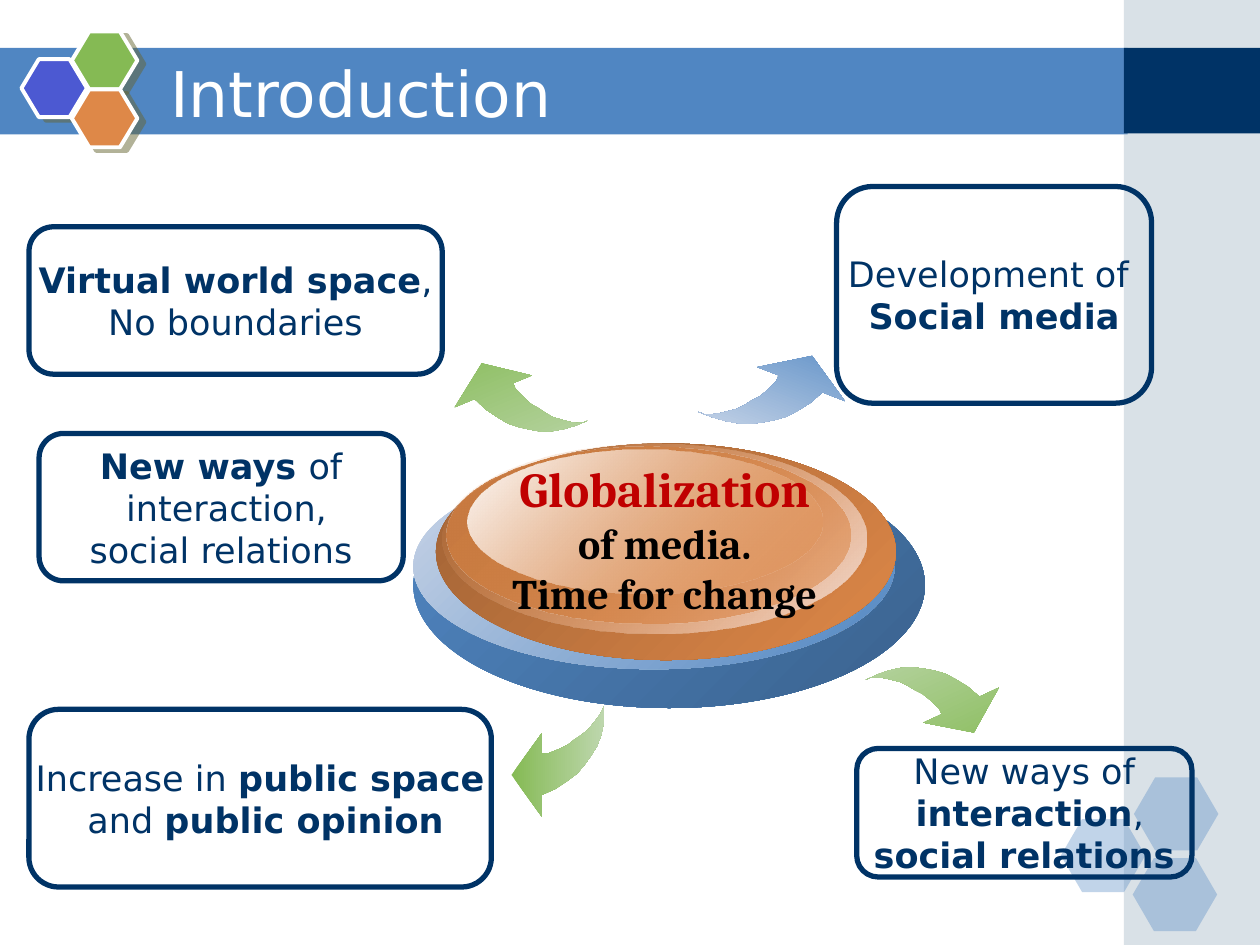
"""Build the introduction slide on the globalization of media."""
from lxml import etree
from pptx import Presentation
from pptx.dml.color import RGBColor
from pptx.enum.shapes import MSO_SHAPE
from pptx.enum.text import MSO_ANCHOR, PP_ALIGN
from pptx.oxml.ns import qn
from pptx.util import Pt

RECTANGLE, HEXAGON = MSO_SHAPE.RECTANGLE, MSO_SHAPE.HEXAGON
OVAL, ROUNDED = MSO_SHAPE.OVAL, MSO_SHAPE.ROUNDED_RECTANGLE
MIDDLE, TOP = MSO_ANCHOR.MIDDLE, MSO_ANCHOR.TOP
CENTER, LEFT = PP_ALIGN.CENTER, PP_ALIGN.LEFT

WHITE = RGBColor(0xFF, 0xFF, 0xFF)
BLACK = RGBColor(0x00, 0x00, 0x00)
NAVY = RGBColor(0x00, 0x33, 0x66)
BLUE = RGBColor(0x50, 0x86, 0xC2)
DEEP_BLUE = RGBColor(0x3A, 0x62, 0x8E)
PALE_BLUE = RGBColor(0xCA, 0xD5, 0xE7)
ICE_BLUE = RGBColor(0xDB, 0xE2, 0xEE)
GRAY_BLUE = RGBColor(0xA0, 0xB5, 0xC4)
INDIGO = RGBColor(0x4C, 0x59, 0xD2)
GREEN = RGBColor(0x85, 0xBA, 0x54)
PALE_GREEN = RGBColor(0xBE, 0xD7, 0xAE)
ORANGE = RGBColor(0xDE, 0x88, 0x48)
BROWN = RGBColor(0x9F, 0x61, 0x34)
COPPER = RGBColor(0xC9, 0x7B, 0x41)
PEACH = RGBColor(0xF4, 0xDF, 0xD6)
RED = RGBColor(0xC0, 0x00, 0x00)
OLIVE = RGBColor(0x66, 0x66, 0x33)
SANS, SERIF = "DejaVu Sans", "Cambria"

TITLE = "Introduction"
TITLE_FRAME = (90, 30.24, 527.76, 44.64)
BANDS = [
    ((-0.72, 27.36, 645.12, 49.5), (BLUE, 100)),
    ((642.24, 0, 77.76, 540), (GRAY_BLUE, 40)),
    ((642.24, 27.36, 77.76, 48.96), (NAVY, 100)),
]
PALE_HEXAGONS = [(606.24, 468), (648, 444.24), (647.28, 490.32)]
BADGE_HEXAGONS = [(12.24, 33.84, INDIGO), (41.04, 18, GREEN), (41.04, 51.12, ORANGE)]
DISC = [
    ((236.2, 264.2, 292.3, 140.4), [(BLUE, 100), (DEEP_BLUE, 100)]),
    ((236.2, 265, 275, 117.4), [(PALE_BLUE, 100), (BLUE, 100)]),
    ((249.1, 253.4, 262.8, 123.8), [(BROWN, 100), (ORANGE, 100)]),
    ((252.7, 253.4, 242.6, 108.7), [(ORANGE, 0), (PEACH, 100)]),
    ((254.9, 254.9, 231.1, 101.5), [(COPPER, 100), (ORANGE, 48)]),
    ((267.1, 257, 203, 82.1), [(WHITE, 100), (ORANGE, 38)]),
]
DISC_TEXT_FRAME = (281.5, 258.5, 196.6, 99.4)
DISC_LINES = [("*Globalization*", 28, RED), ("*of media.*", 24, BLACK),
              ("*Time for change*", 24, BLACK)]
IDEAS = [
    ((16.56, 129.6, 236.16, 84.24), ["*Virtual world space*,", "No boundaries"]),
    ((478.08, 106.56, 180, 123.84), ["Development of ", "*Social media*"]),
    ((22.32, 247.68, 208.08, 84.24),
     ["*New ways *of", " interaction,", "social relations"]),
    ((16.56, 405.36, 264.24, 101.52),
     ["Increase in *public space*", " and *public opinion*"]),
    ((489.6, 427.68, 191.52, 73.44),
     ["New ways of", " *interaction*,", "*social relations*"]),
]
ARROWS = [
    ((267.8, 195.1, 53.3, 67), 67.6, False, (GREEN, PALE_GREEN)),
    ((417.6, 186.5, 53.3, 75.6), 291.2, True, (BLUE, ICE_BLUE)),
    ((292.3, 399.6, 53.3, 67), 0, False, (GREEN, PALE_GREEN)),
    ((509.8, 365, 53.3, 67), 245.1, False, (GREEN, PALE_GREEN)),
]
ARROW_OUTLINE = [
    (74, 0), (74, 10), (73, 20), (71, 29), (68, 37), (63, 45), (58, 52), (52, 59),
    (44, 65), (35, 71), (24, 76), (24, 93), (0, 60), (24, 27), (24, 43), (29, 43),
    (34, 41), (39, 39), (45, 36), (50, 32), (56, 28), (61, 24), (65, 19), (69, 14),
    (72, 9), (74, 4),
]


def place(shape, frame):
    shape.left, shape.top, shape.width, shape.height = map(Pt, frame)


def paint(shape, stops, angle=0):
    if len(stops) == 1:
        shape.fill.solid()
        shape.fill.fore_color.rgb = stops[0][0]
    else:
        shape.fill.gradient()
        shape.fill.gradient_angle = -angle % 360
        for stop, (color, _) in zip(shape.fill.gradient_stops, stops):
            stop.color.rgb = color
    colors = list(shape._element.spPr.iter(qn("a:srgbClr")))
    for element, (_, opacity) in zip(colors, stops):
        if opacity < 100:
            etree.SubElement(element, qn("a:alpha"), val=str(opacity * 1000))
    shape.line.fill.background()
    shape.shadow.inherit = False


def add_painted(slide, kind, frame, stops, angle=0):
    shape = slide.shapes.add_shape(kind, *map(Pt, frame))
    paint(shape, stops, angle)
    return shape


def outline(shape, color, width):
    shape.line.color.rgb = color
    shape.line.width = Pt(width)


def cast_shadow(shape):
    effects = shape._element.spPr.find(qn("a:effectLst"))
    shadow = etree.SubElement(effects, qn("a:outerShdw"), blurRad="0",
                              dist=str(Pt(4.5)), dir=str(27 * 60000),
                              algn="ctr", rotWithShape="0")
    color = etree.SubElement(shadow, qn("a:srgbClr"), val=str(OLIVE))
    etree.SubElement(color, qn("a:alpha"), val="50000")


def write(shape, lines, font=SANS, align=CENTER, anchor=MIDDLE, wrap=True):
    """Write (text, size, color) lines, with bold spans between asterisks."""
    frame = shape.text_frame
    frame.word_wrap, frame.vertical_anchor = wrap, anchor
    for index, (text, size, color) in enumerate(lines):
        para = frame.add_paragraph() if index else frame.paragraphs[0]
        para.alignment = align
        for part, words in enumerate(text.split("*")):
            if words:
                span = para.add_run()
                span.text = words
                span.font.name, span.font.size = font, Pt(size)
                span.font.bold, span.font.color.rgb = part % 2 == 1, color


def add_arrow(slide, frame, rotation, flipped, colors):
    builder = slide.shapes.build_freeform(*ARROW_OUTLINE[0], scale=Pt(1))
    builder.add_line_segments(ARROW_OUTLINE[1:], close=True)
    arrow = builder.convert_to_shape()
    place(arrow, frame)
    arrow.rotation = rotation
    if flipped:
        arrow._element.spPr.find(qn("a:xfrm")).set("flipH", "1")
    paint(arrow, [(color, 100) for color in colors])


def main():
    deck = Presentation()
    deck.slide_width, deck.slide_height = Pt(720), Pt(540)
    page = deck.slides.add_slide(deck.slide_layouts[5])

    for frame, stop in BANDS:
        add_painted(page, RECTANGLE, frame, [stop])
    for left, top in PALE_HEXAGONS:
        hexagon = add_painted(page, HEXAGON, (left, top, 48.24, 41.76), [(BLUE, 35)])
        hexagon.adjustments[0] = 0.29
    for left, top, color in BADGE_HEXAGONS:
        hexagon = add_painted(page, HEXAGON, (left, top, 37.44, 33.12), [(color, 100)])
        hexagon.adjustments[0] = 0.3
        outline(hexagon, WHITE, 2.25)
        cast_shadow(hexagon)

    title = page.shapes.title
    place(title, TITLE_FRAME)
    write(title, [(TITLE, 36, WHITE)], align=LEFT)
    page.shapes._spTree.append(title._element)

    for frame, stops in DISC:
        add_painted(page, OVAL, frame, stops, angle=45)
    box = page.shapes.add_textbox(*map(Pt, DISC_TEXT_FRAME))
    write(box, DISC_LINES, font=SERIF, anchor=TOP)

    for frame, lines in IDEAS:
        idea = page.shapes.add_shape(ROUNDED, *map(Pt, frame))
        idea.fill.background()
        idea.shadow.inherit = False
        outline(idea, NAVY, 3)
        write(idea, [(text, 20, NAVY) for text in lines], wrap=False)
    for arrow in ARROWS:
        add_arrow(page, *arrow)

    deck.save("out.pptx")


if __name__ == "__main__":
    main()
